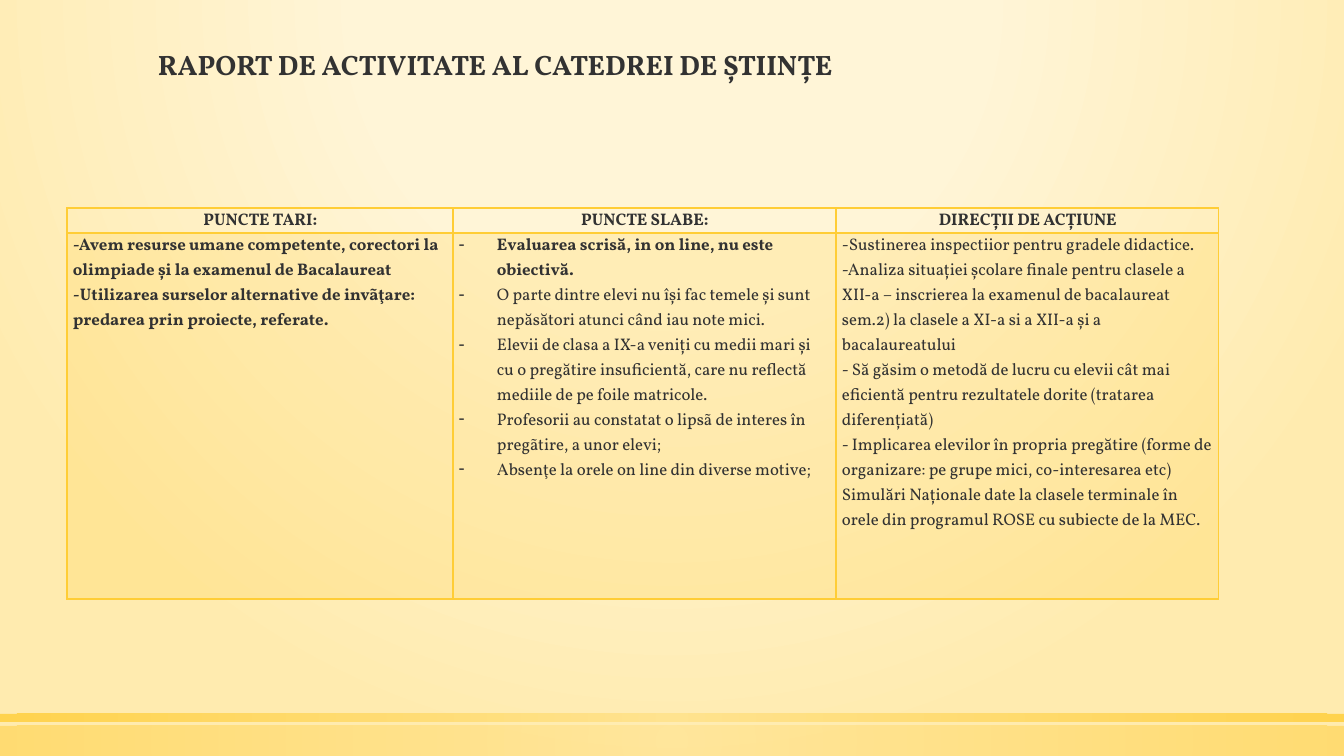
from lxml import etree
from pptx import Presentation
from pptx.dml.color import RGBColor
from pptx.enum.shapes import MSO_SHAPE
from pptx.enum.text import MSO_ANCHOR, PP_ALIGN
from pptx.oxml.ns import qn
from pptx.util import Emu, Pt

RECT = MSO_SHAPE.RECTANGLE
TOP = MSO_ANCHOR.TOP
LEFT, CENTER = PP_ALIGN.LEFT, PP_ALIGN.CENTER
COLORS = {"ink": "323232", "gold": "FFCD36", "light": "FFE186",
          "cream": "FFF5D7", "sand": "FFEBAF"}
FONT = "Vollkorn"

TITLE = "RAPORT DE ACTIVITATE AL CATEDREI DE ȘTIINȚE"
HEADS = ["PUNCTE TARI:", "PUNCTE SLABE:", "DIRECȚII DE ACȚIUNE"]
STRONG = [
    "-Avem resurse umane competente, corectori la olimpiade și la examenul de Bacalaureat",
    "-Utilizarea surselor alternative de invãţare: predarea prin proiecte, referate.",
]
WEAK = [
    "Evaluarea scrisă, in on line, nu este obiectivă.",
    "O parte dintre elevi nu își fac temele și sunt nepăsători atunci când iau note mici.",
    "Elevii de clasa a IX-a veniți cu medii mari și cu o pregătire insuficientă, "
    "care nu reflectă mediile de pe foile matricole.",
    "Profesorii au constatat o lipsã de interes în pregãtire, a unor elevi;",
    "Absenţe la orele on line din diverse motive;",
]
PLANS = [
    "-Sustinerea inspectiior pentru gradele didactice.",
    "-Analiza situației școlare finale pentru clasele a XII-a – inscrierea la examenul "
    "de bacalaureat sem.2) la clasele a XI-a si a XII-a și a bacalaureatului",
    "- Să găsim o metodă de lucru cu elevii cât mai eficientă pentru rezultatele dorite "
    "(tratarea diferențiată)",
    "- Implicarea elevilor în propria pregătire (forme de organizare: pe grupe mici, "
    "co-interesarea etc)",
    "Simulări Naționale date la clasele terminale în orele din programul ROSE cu "
    "subiecte de la MEC.",
]


def px(n):
    return Emu(round(n * 914400 / 100.8))


def add(node, tag, **attrs):
    """Append a child with the given attributes and return it."""
    child = etree.SubElement(node, qn(tag))
    for key, value in attrs.items():
        child.set(key, str(value))
    return child


def tint(node, name, alpha=100):
    """Append a colour with an opacity in percent."""
    color = add(node, "a:srgbClr", val=COLORS[name])
    if alpha < 100:
        add(color, "a:alpha", val=alpha * 1000)


def radial(fill, root, stops, top=50, bottom=50):
    """Turn a fill into a circular gradient of (place, colour, opacity) stops."""
    fill.gradient()
    grad = root.find(".//" + qn("a:gradFill"))
    for child in list(grad):
        grad.remove(child)
    row = add(grad, "a:gsLst")
    for place, name, alpha in stops:
        tint(add(row, "a:gs", pos=place * 1000), name, alpha)
    way = add(grad, "a:path", path="circle")
    add(way, "a:fillToRect", l=50000, t=top * 1000, r=50000, b=bottom * 1000)


class Page:
    def __init__(self, deck):
        self.slide = deck.slides.add_slide(deck.slide_layouts[6])
        self.shapes = self.slide.shapes

    def backdrop(self):
        stops = [(0, "cream", 59), (40, "cream", 66), (100, "sand", 100)]
        radial(self.slide.background.fill, self.slide._element, stops, -80, 180)

    def bar(self, y, h, alpha):
        bar = self.shapes.add_shape(RECT, 0, px(y), px(1344), px(h))
        bar.shadow.inherit = False
        bar.line.fill.background()
        radial(bar.fill, bar._element, [(0, "light", alpha), (100, "gold", alpha)])

    def style(self, par, text, size, bold, align=LEFT, space=1.07):
        par.text = text
        par.alignment = align
        par.line_spacing = space
        par.font.name = FONT
        par.font.size = Pt(size)
        par.font.bold = bold
        par.font.color.rgb = RGBColor.from_string(COLORS["ink"])

    def title(self, text, x, y, w, h):
        frame = self.shapes.add_textbox(px(x), px(y), px(w), px(h)).text_frame
        frame.word_wrap = True
        frame.vertical_anchor = TOP
        frame.margin_left = frame.margin_right = px(10)
        frame.margin_top = frame.margin_bottom = 0
        self.style(frame.paragraphs[0], text, 20, True, space=0.9)

    def table(self, x, y, widths, heights):
        grid = self.shapes.add_table(len(heights), len(widths), px(x), px(y),
                                     px(sum(widths)), px(sum(heights))).table
        grid.first_row = grid.horz_banding = False
        for col, w in zip(grid.columns, widths):
            col.width = px(w)
        for row, h in zip(grid.rows, heights):
            row.height = px(h)
        return grid

    def cell(self, cell, lines, bold=0, align=LEFT, dash=False, base=1, filled=True):
        """Fill a cell; the first `bold` lines are bold, base is the lower border."""
        cell.margin_left, cell.margin_right = px(6), px(5)
        cell.margin_top = cell.margin_bottom = 0
        props = cell._tc.get_or_add_tcPr()
        for side, width in zip("LRTB", (1, 1, 1, base)):
            edge = add(props, "a:ln" + side, w=Pt(width))
            tint(add(edge, "a:solidFill"), "gold")
        if filled:
            tint(add(props, "a:solidFill"), "gold", 20)
        else:
            cell.fill.background()
        frame = cell.text_frame
        for i, text in enumerate(lines):
            par = frame.add_paragraph() if i else frame.paragraphs[0]
            self.style(par, text, 12, i < bold, align)
            if dash:
                rule = par._p.get_or_add_pPr()
                rule.set("marL", str(px(38)))
                rule.set("indent", str(-px(38)))
                mark = etree.Element(qn("a:buChar"), char="-")
                rule.insert(1, mark)


def main():
    deck = Presentation()
    deck.slide_width, deck.slide_height = px(1344), px(756)
    page = Page(deck)
    page.backdrop()
    page.bar(726, 30, 50)
    page.bar(714, 8, 80)
    page.title(TITLE, 148, 51, 1048, 74)
    grid = page.table(67, 208, [386, 383, 383], [25, 366])
    for i, head in enumerate(HEADS):
        page.cell(grid.cell(0, i), [head], 1, CENTER, base=2, filled=False)
    page.cell(grid.cell(1, 0), STRONG, bold=2)
    page.cell(grid.cell(1, 1), WEAK, bold=1, dash=True)
    page.cell(grid.cell(1, 2), PLANS)
    deck.save("out.pptx")


if __name__ == "__main__":
    main()
